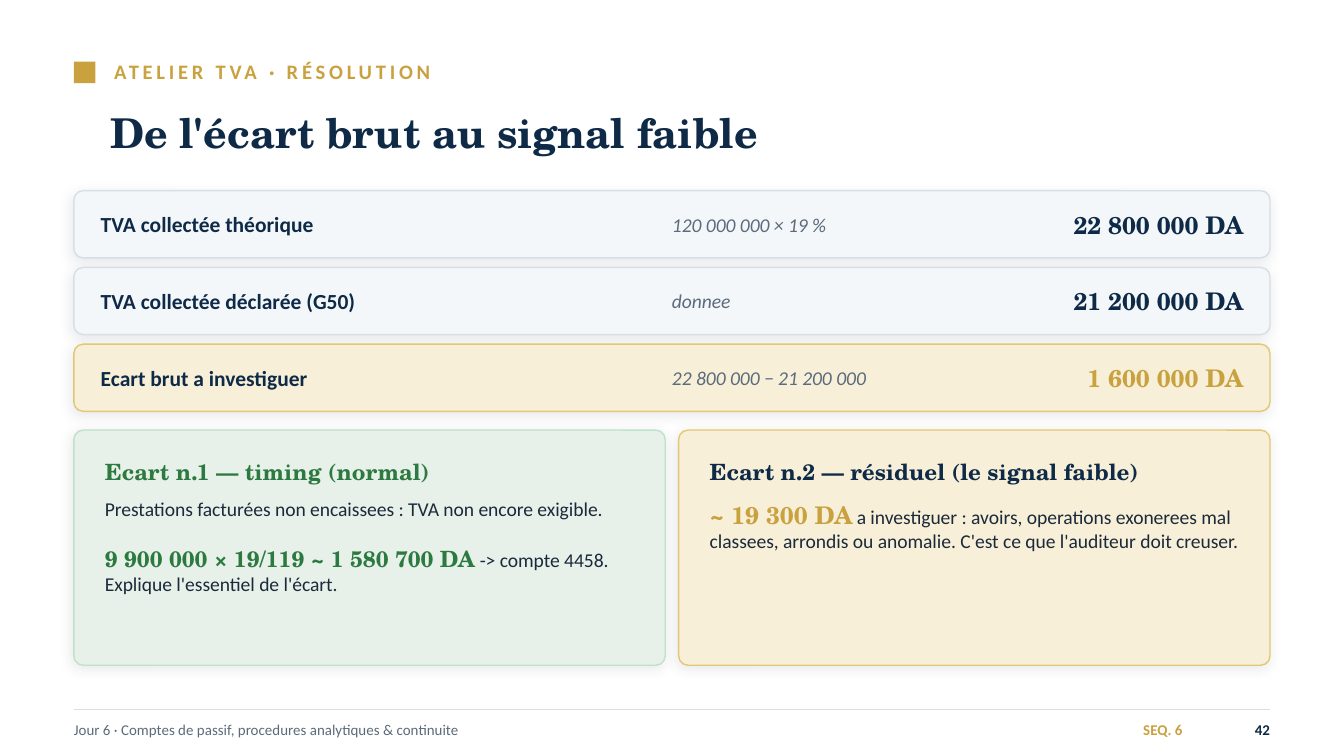
"""Build the VAT workshop slide that goes from the gross gap to the weak signal."""
from lxml.etree import SubElement
from pptx import Presentation
from pptx.dml.color import RGBColor
from pptx.enum.shapes import MSO_CONNECTOR, MSO_SHAPE
from pptx.enum.text import MSO_ANCHOR, MSO_AUTO_SIZE, PP_ALIGN
from pptx.oxml.ns import qn
from pptx.util import Pt

NAVY = RGBColor(0x0E, 0x2A, 0x47)
INK = RGBColor(0x1B, 0x2A, 0x3A)
SLATE = RGBColor(0x5B, 0x6B, 0x7B)
GOLD = RGBColor(0xC9, 0xA2, 0x3F)
GOLD_LINE = RGBColor(0xE4, 0xC7, 0x72)
CREAM = RGBColor(0xF7, 0xEF, 0xD8)
GREEN = RGBColor(0x2C, 0x7A, 0x3F)
GREEN_LINE = RGBColor(0xBF, 0xE0, 0xC9)
MINT = RGBColor(0xE7, 0xF1, 0xEA)
MIST = RGBColor(0xF4, 0xF7, 0xFA)
GREY_LINE = RGBColor(0xD7, 0xDE, 0xE6)
SANS = "Calibri"
SERIF = "TeX Gyre Schola"
LEFT, WIDTH = 39.6, 640.8


def write(shape, paragraphs, anchor=MSO_ANCHOR.MIDDLE, alignment=PP_ALIGN.LEFT):
    frame = shape.text_frame
    frame.word_wrap = True
    frame.auto_size = MSO_AUTO_SIZE.NONE
    frame.vertical_anchor = anchor
    frame.margin_left = frame.margin_right = frame.margin_top = frame.margin_bottom = 0
    for index, runs in enumerate(paragraphs):
        paragraph = frame.add_paragraph() if index else frame.paragraphs[0]
        paragraph.alignment = alignment
        if index:
            paragraph.space_before = Pt(12.8)
        for text, font_name, size, color, style in runs:
            run = paragraph.add_run()
            run.text = text
            run.font.name = font_name
            run.font.size = Pt(size)
            run.font.color.rgb = color
            run.font.bold = style == "bold"
            run.font.italic = style == "italic"


def add_card(left, top, width, height, radius, fill, line):
    card = slide.shapes.add_shape(
        MSO_SHAPE.ROUNDED_RECTANGLE, Pt(left), Pt(top), Pt(width), Pt(height))
    card.adjustments[0] = radius
    card.fill.solid()
    card.fill.fore_color.rgb = fill
    card.line.color.rgb = line
    card.line.width = Pt(0.75)
    effects = SubElement(card.element.spPr, qn("a:effectLst"))
    shadow = SubElement(effects, qn("a:outerShdw"), blurRad=str(Pt(7)), dist=str(Pt(2)),
                        dir="8100000", algn="bl", rotWithShape="0")
    color = SubElement(shadow, qn("a:srgbClr"), val=str(INK))
    SubElement(color, qn("a:alpha"), val="10000")


presentation = Presentation()
presentation.slide_width = Pt(720)
presentation.slide_height = Pt(405)
slide = presentation.slides.add_slide(presentation.slide_layouts[5])

title = slide.shapes.title
title.left, title.top, title.width, title.height = Pt(59), Pt(46.8), Pt(626.4), Pt(47.5)
write(title, [[("De l'écart brut au signal faible", SERIF, 22, NAVY, "bold")]])

marker = slide.shapes.add_shape(MSO_SHAPE.RECTANGLE, Pt(LEFT), Pt(33.1), Pt(11.5), Pt(11.5))
marker.shadow.inherit = False
marker.fill.solid()
marker.fill.fore_color.rgb = GOLD
marker.line.fill.background()

kicker = slide.shapes.add_textbox(Pt(61.2), Pt(28.8), Pt(619.2), Pt(18.7))
write(kicker, [[("ATELIER TVA · RÉSOLUTION", SANS, 11, GOLD, "bold")]])
kicker.text_frame.paragraphs[0].runs[0].font._element.set("spc", "200")

rule = slide.shapes.add_connector(
    MSO_CONNECTOR.STRAIGHT, Pt(LEFT), Pt(380.2), Pt(LEFT + WIDTH), Pt(380.2))
rule.line.color.rgb = GREY_LINE
rule.line.width = Pt(0.75)
SubElement(rule.element.spPr, qn("a:effectLst"))

footers = [
    (LEFT, 460.8, "Jour 6 · Comptes de passif, procedures analytiques & continuite",
     SLATE, "plain", PP_ALIGN.LEFT),
    (496.8, 136.8, "SEQ. 6", GOLD, "bold", PP_ALIGN.RIGHT),
    (648, 32.4, "42", NAVY, "bold", PP_ALIGN.RIGHT),
]
for left, width, text, color, style, alignment in footers:
    footer = slide.shapes.add_textbox(Pt(left), Pt(381.6), Pt(width), Pt(18))
    write(footer, [[(text, SANS, 8, color, style)]], alignment=alignment)

amount_rows = [
    ("TVA collectée théorique", "120 000 000 × 19 %", "22 800 000 DA", NAVY, MIST, GREY_LINE),
    ("TVA collectée déclarée (G50)", "donnee", "21 200 000 DA", NAVY, MIST, GREY_LINE),
    ("Ecart brut a investiguer", "22 800 000 − 21 200 000", "1 600 000 DA",
     GOLD, CREAM, GOLD_LINE),
]
for index, (label, formula, amount, amount_color, fill, line) in enumerate(amount_rows):
    top = 102.2 + index * 41.1
    add_card(LEFT, top, WIDTH, 36, 0.14, fill, line)
    cells = [
        (54, 302.4, (label, SANS, 11.5, NAVY, "bold"), PP_ALIGN.LEFT),
        (360, 172.8, (formula, SANS, 10.5, SLATE, "italic"), PP_ALIGN.LEFT),
        (525.6, 140.4, (amount, SERIF, 13, amount_color, "bold"), PP_ALIGN.RIGHT),
    ]
    for left, width, run, alignment in cells:
        cell = slide.shapes.add_textbox(Pt(left), Pt(top), Pt(width), Pt(36))
        write(cell, [[run]], alignment=alignment)

gap_cards = [
    ("Ecart n.1 — timing (normal)", GREEN, MINT, GREEN_LINE, 266.4, [
        [("Prestations facturées non encaissees : TVA non encore exigible.",
          SANS, 10.5, INK, "plain")],
        [("9 900 000 × 19/119 ~ 1 580 700 DA", SERIF, 12, GREEN, "bold"),
         (" -> compte 4458. Explique l'essentiel de l'écart.", SANS, 10.5, INK, "plain")],
    ]),
    ("Ecart n.2 — résiduel (le signal faible)", NAVY, CREAM, GOLD_LINE, 267.8, [
        [("~ 19 300 DA", SERIF, 13, GOLD, "bold"),
         (" a investiguer : avoirs, operations exonerees mal classees, arrondis ou anomalie."
          " C'est ce que l'auditeur doit creuser.", SANS, 10.5, INK, "plain")],
    ]),
]
for index, (heading, color, fill, line, body_top, paragraphs) in enumerate(gap_cards):
    left = LEFT + index * 324
    add_card(left, 230.4, 316.8, 126, 0.04, fill, line)
    heading_box = slide.shapes.add_textbox(Pt(left + 16.6), Pt(240.5), Pt(288), Pt(24.5))
    write(heading_box, [[(heading, SERIF, 12, color, "bold")]])
    body_box = slide.shapes.add_textbox(Pt(left + 16.6), Pt(body_top), Pt(288), Pt(86.4))
    write(body_box, paragraphs, MSO_ANCHOR.TOP)

presentation.save("out.pptx")
